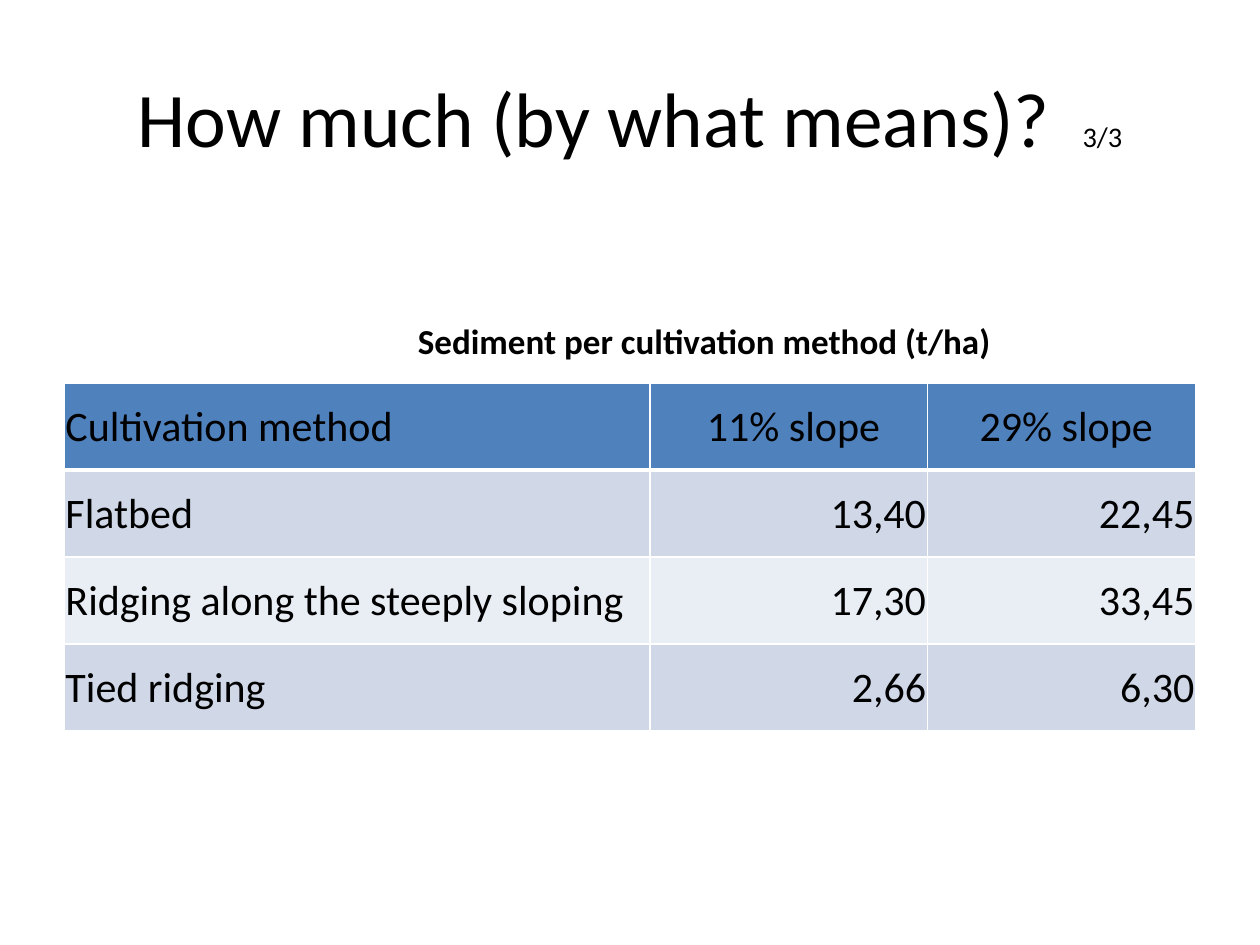
from lxml.etree import SubElement
from pptx import Presentation
from pptx.dml.color import RGBColor
from pptx.enum.text import MSO_ANCHOR, MSO_AUTO_SIZE, PP_ALIGN
from pptx.oxml.ns import qn
from pptx.util import Inches, Pt

# Content
TITLE = [("How much (by what means)?", 44.1), ("\t", 39.6), ("3/3", 16.2)]
CAPTION = "Sediment per cultivation method (t/ha)"
ROWS = [
    ("Cultivation method", " 11% slope", " 29% slope"),
    ("Flatbed", "13,40", "22,45"),
    ("Ridging along the steeply sloping", "17,30", "33,45"),
    ("Tied ridging", "2,66", "6,30"),
]

# Look
FONT, INK, LINE = "Calibri", "000000", "FFFFFF"
HEAD, BANDS = "4F81BD", ("E9EDF4", "D0D8E8")
COLS, ROW = (4.65, 2.2, 2.13), 0.69


def color(code):
    return RGBColor.from_string(code)


def write(frame, runs, align, bold=False):
    para = frame.paragraphs[0]
    para.alignment = align
    for text, size in runs:
        run = para.add_run()
        run.text = text
        font = run.font
        font.name, font.size, font.bold = FONT, Pt(size), bold
        font.color.rgb = color(INK)


def add_text(slide, place, runs, bold=False):
    box = slide.shapes.add_textbox(*map(Inches, place))
    frame = box.text_frame
    frame.word_wrap = True
    write(frame, runs, PP_ALIGN.CENTER, bold)
    return frame


def border(cell, widths):
    props = cell._tc.get_or_add_tcPr()
    for side, width in zip("LRTB", widths):
        line = SubElement(props, qn(f"a:ln{side}"), w=str(Pt(width)))
        fill = SubElement(line, qn("a:solidFill"))
        SubElement(fill, qn("a:srgbClr"), val=LINE)


def add_grid(slide, left, top):
    size = (sum(COLS), ROW * len(ROWS))
    table = slide.shapes.add_table(
        len(ROWS), len(COLS), *map(Inches, (left, top, *size))).table
    for col, width in zip(table.columns, COLS):
        col.width = Inches(width)
    for r, row in enumerate(ROWS):
        table.rows[r].height = Inches(ROW)
        for c, text in enumerate(row):
            cell = table.cell(r, c)
            cell.margin_left = cell.margin_right = Inches(0.01)
            cell.margin_top, cell.margin_bottom = Inches(0.01), 0
            cell.vertical_anchor = MSO_ANCHOR.MIDDLE
            # The rule under the header is thicker
            border(cell, (1, 1, 3 if r == 1 else 1, 3 if r == 0 else 1))
            cell.fill.solid()
            cell.fill.fore_color.rgb = color(BANDS[r % 2] if r else HEAD)
            if c == 0:
                align = PP_ALIGN.LEFT
            else:
                align = PP_ALIGN.RIGHT if r else PP_ALIGN.CENTER
            write(cell.text_frame, [(text, 24)], align)


def main():
    deck = Presentation()
    deck.slide_width, deck.slide_height = Inches(10), Inches(7.5)
    slide = deck.slides.add_slide(deck.slide_layouts[6])

    # Title with page count
    title = add_text(slide, (0.5, 0.3, 9, 1.25), TITLE)
    title.vertical_anchor = MSO_ANCHOR.MIDDLE

    # Table and its caption
    add_grid(slide, 0.51, 3.04)
    note = add_text(slide, (1.77, 2.49, 7.64, 0.44), [(CAPTION, 20)], True)
    note.auto_size = MSO_AUTO_SIZE.SHAPE_TO_FIT_TEXT

    deck.save("out.pptx")


if __name__ == "__main__":
    main()
